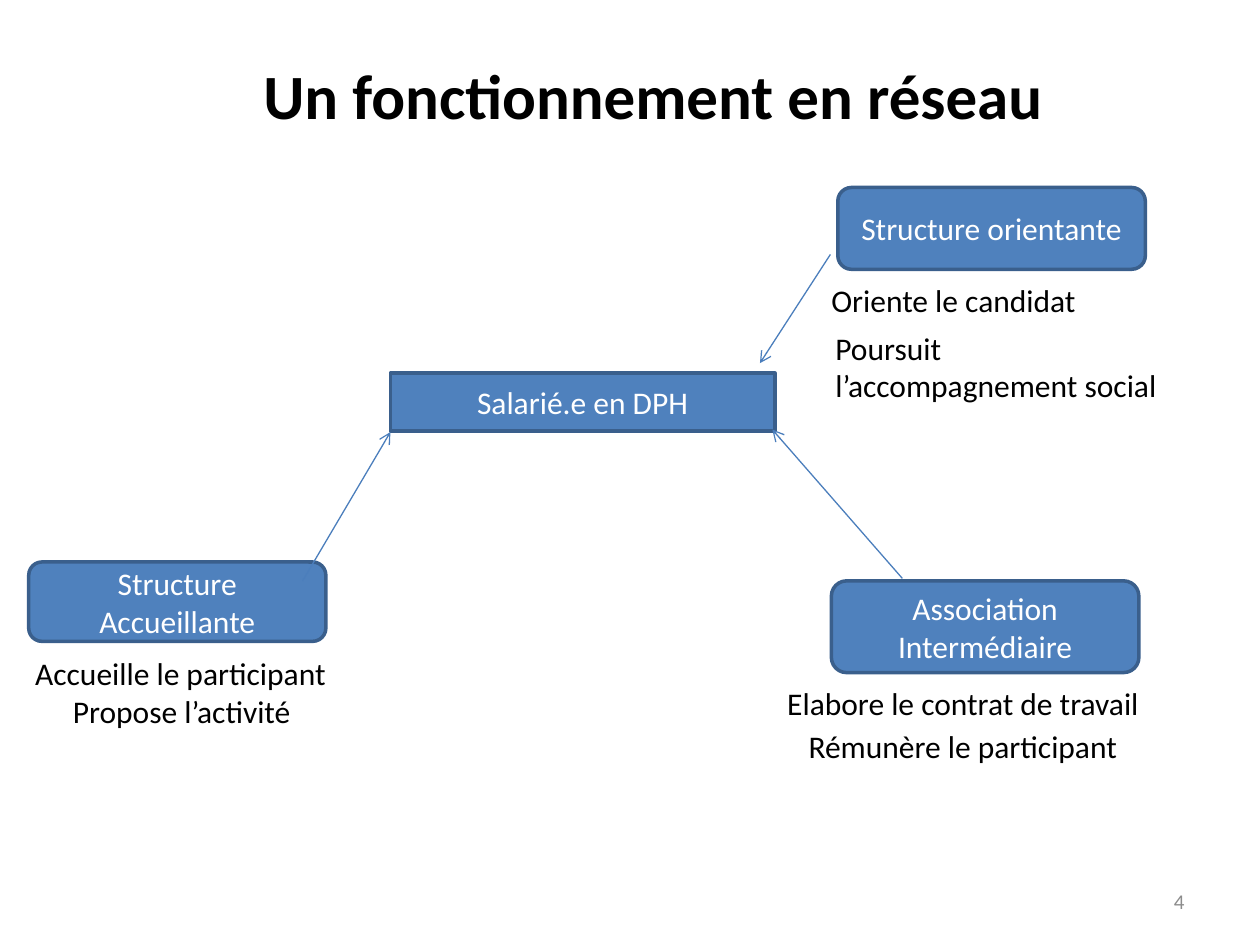
from dataclasses import dataclass
from lxml.etree import SubElement
from pptx import Presentation
from pptx.dml.color import RGBColor as RGB
from pptx.enum.shapes import MSO_CONNECTOR as LINK, MSO_SHAPE as SHAPE
from pptx.enum.text import MSO_ANCHOR as ANCHOR, PP_ALIGN as ALIGN
from pptx.oxml.ns import qn
from pptx.util import Cm, Pt


@dataclass
class Theme:
    font: str = "Calibri"
    black: RGB = RGB(0x00, 0x00, 0x00)
    white: RGB = RGB(0xFF, 0xFF, 0xFF)
    gray: RGB = RGB(0x8C, 0x8C, 0x8C)
    blue: RGB = RGB(0x4F, 0x81, 0xBD)
    edge: RGB = RGB(0x3A, 0x5F, 0x8C)
    arrow: RGB = RGB(0x4B, 0x7E, 0xBC)
    title: int = 36
    body: int = 18
    small: int = 12


theme = Theme()


def write(shape, text, size, color, align=ALIGN.LEFT, anchor=ANCHOR.TOP,
          wrap=True, bold=False):
    frame = shape.text_frame
    frame.word_wrap = wrap
    frame.vertical_anchor = anchor
    para = frame.paragraphs[0]
    para.alignment = align
    run = para.add_run()
    run.text = text
    run.font.name = theme.font
    run.font.size = Pt(size)
    run.font.bold = bold
    run.font.color.rgb = color


deck = Presentation()
deck.slide_width, deck.slide_height = Cm(25.4), Cm(19.05)
slide = deck.slides.add_slide(deck.slide_layouts[5])
shapes = slide.shapes

# Title and page number
title = shapes.title
title.left, title.top, title.width, title.height = map(Cm, (1.14, 1.02, 24.05, 1.8))
write(title, "Un fonctionnement en réseau", theme.title, theme.black,
      ALIGN.CENTER, bold=True)
page = shapes.add_textbox(*map(Cm, (18.21, 17.65, 5.92, 1.02)))
write(page, "4", theme.small, theme.gray, ALIGN.RIGHT, ANCHOR.MIDDLE)

# The employee and the three partners
boxes = [
    (SHAPE.RECTANGLE, "Salarié.e en DPH", (7.87, 7.52, 7.75, 1.17)),
    (SHAPE.ROUNDED_RECTANGLE, "Structure Accueillante", (0.58, 11.33, 5.99, 1.6)),
    (SHAPE.ROUNDED_RECTANGLE, "Association Intermédiaire", (16.76, 11.71, 6.2, 1.85)),
    (SHAPE.ROUNDED_RECTANGLE, "Structure orientante", (16.89, 3.78, 6.2, 1.65)),
]
for kind, text, place in boxes:
    box = shapes.add_shape(kind, *map(Cm, place))
    box.shadow.inherit = False
    box.fill.solid()
    box.fill.fore_color.rgb = theme.blue
    box.line.color.rgb = theme.edge
    box.line.width = Pt(2)
    write(box, text, theme.body, theme.white, ALIGN.CENTER, ANCHOR.MIDDLE)

# Role of each partner
roles = [
    ("Accueille le participant", (0.46, 13.06, 6.45, 1.02), False),
    ("Propose l’activité", (1.22, 13.82, 4.95, 1.02), False),
    ("Elabore le contrat de travail", (15.62, 13.67, 7.67, 1.02), False),
    ("Rémunère le participant", (16.05, 14.53, 6.81, 1.02), False),
    ("Oriente le candidat", (16.51, 5.54, 9.88, 1.02), True),
    ("Poursuit l’accompagnement social", (16.59, 6.5, 7.42, 1.8), True),
]
for text, place, wrap in roles:
    role = shapes.add_textbox(*map(Cm, place))
    write(role, text, theme.body, theme.black, wrap=wrap)

# Arrows from the partners to the employee
arrows = [
    (18.19, 11.66, 15.57, 8.66),
    (6.1, 11.71, 7.87, 8.71),
    (16.74, 5.13, 15.32, 7.32),
]
for ends in arrows:
    arrow = shapes.add_connector(LINK.STRAIGHT, *map(Cm, ends))
    arrow.line.color.rgb = theme.arrow
    arrow.line.width = Pt(0.75)
    SubElement(arrow.line._get_or_add_ln(), qn("a:tailEnd"), type="arrow")
    SubElement(arrow._element.spPr, qn("a:effectLst"))

deck.save("out.pptx")
